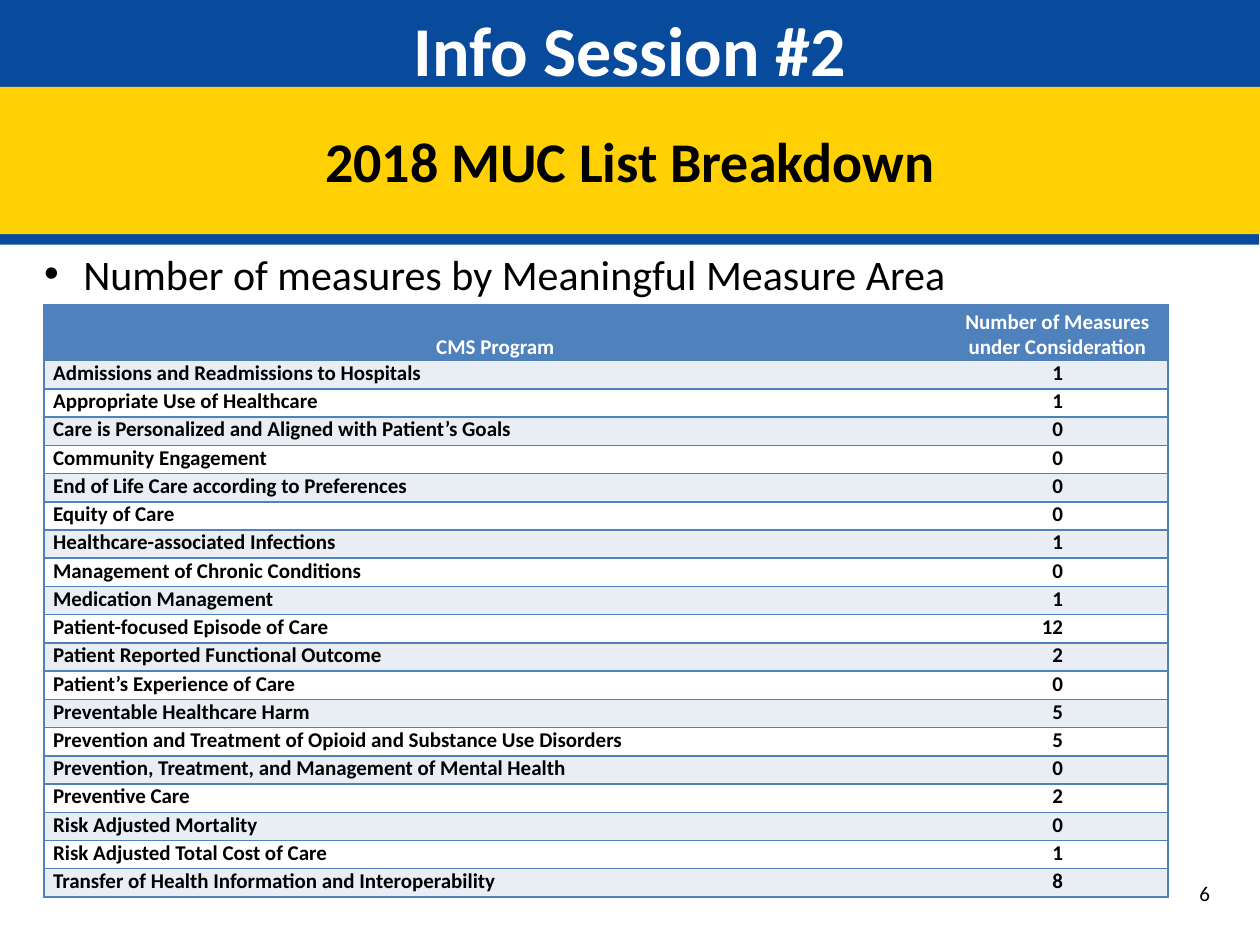
from lxml.etree import SubElement
from pptx import Presentation
from pptx.dml.color import RGBColor
from pptx.enum.shapes import MSO_SHAPE
from pptx.enum.text import MSO_ANCHOR as Anchor, PP_ALIGN as Align
from pptx.oxml.ns import qn
from pptx.util import Cm, Pt

FONT = "Calibri"
BLUE = RGBColor(0x08, 0x4A, 0x9C)
YELLOW = RGBColor(0xFF, 0xD0, 0x04)
HEADER_BLUE = RGBColor(0x4F, 0x81, 0xBD)
STRIPE = RGBColor(0xE9, 0xED, 0xF4)
WHITE = RGBColor(0xFF, 0xFF, 0xFF)
BLACK = RGBColor(0, 0, 0)

HEADINGS = ("CMS Program", "Number of Measures under Consideration")
MEASURE_AREAS = [
    ("Admissions and Readmissions to Hospitals", 1),
    ("Appropriate Use of Healthcare", 1),
    ("Care is Personalized and Aligned with Patient’s Goals", 0),
    ("Community Engagement", 0),
    ("End of Life Care according to Preferences", 0),
    ("Equity of Care", 0),
    ("Healthcare-associated Infections", 1),
    ("Management of Chronic Conditions", 0),
    ("Medication Management", 1),
    ("Patient-focused Episode of Care", 12),
    ("Patient Reported Functional Outcome", 2),
    ("Patient’s Experience of Care", 0),
    ("Preventable Healthcare Harm", 5),
    ("Prevention and Treatment of Opioid and Substance Use Disorders", 5),
    ("Prevention, Treatment, and Management of Mental Health", 0),
    ("Preventive Care", 2),
    ("Risk Adjusted Mortality", 0),
    ("Risk Adjusted Total Cost of Care", 1),
    ("Transfer of Health Information and Interoperability", 8),
]


def add_run(paragraph, text, size, color=BLACK, bold=False):
    run = paragraph.add_run()
    run.text = text
    run.font.name = FONT
    run.font.size = Pt(size)
    run.font.bold = bold
    run.font.color.rgb = color


def add_band(slide, left, top, width, height, fill, text, size, color, anchor):
    band = slide.shapes.add_shape(
        MSO_SHAPE.RECTANGLE, Cm(left), Cm(top), Cm(width), Cm(height))
    band.shadow.inherit = False
    band.fill.solid()
    band.fill.fore_color.rgb = fill
    band.line.fill.background()
    frame = band.text_frame
    frame.word_wrap = True
    frame.vertical_anchor = anchor
    frame.paragraphs[0].alignment = Align.CENTER
    add_run(frame.paragraphs[0], text, size, color, bold=True)
    return band


def add_drop_edge(band, color):
    """Give the band a hard shadow that shows as a strip along its lower edge."""
    effects = band._element.spPr.find(qn("a:effectLst"))
    shadow = SubElement(effects, qn("a:outerShdw"), blurRad="0",
                        dist=str(Pt(6)), dir=str(94 * 60000),
                        algn="ctr", rotWithShape="0")
    SubElement(shadow, qn("a:srgbClr"), val=str(color))


def add_banner(slide, left, top, width):
    add_band(slide, left, top, width, 3.73, BLUE,
             "Info Session #2", 40, WHITE, Anchor.TOP)
    subtitle = add_band(slide, left, top + 1.75, width, 2.97, YELLOW,
                        "2018 MUC List Breakdown", 32, BLACK, Anchor.MIDDLE)
    add_drop_edge(subtitle, BLUE)


def add_text(slide, left, top, width, height, text, size):
    box = slide.shapes.add_textbox(Cm(left), Cm(top), Cm(width), Cm(height))
    box.text_frame.word_wrap = True
    paragraph = box.text_frame.paragraphs[0]
    add_run(paragraph, text, size)
    return paragraph


def add_bullet(slide, left, top, width, height, text):
    paragraph = add_text(slide, left, top, width, height, text, 24)
    properties = paragraph._p.get_or_add_pPr()
    properties.set("marL", str(Cm(0.79)))
    properties.set("indent", str(-Cm(0.79)))
    SubElement(properties, qn("a:buFont"), typeface="Arial")
    SubElement(properties, qn("a:buChar"), char="•")


def style_cell(cell, fill, outer_side):
    """Fill the cell and rule every side but the one between the columns."""
    properties = cell._tc.get_or_add_tcPr()
    for side in ("lnL", "lnR", "lnT", "lnB"):
        line = SubElement(properties, qn(f"a:{side}"), w=str(Pt(1)))
        if side in (outer_side, "lnT", "lnB"):
            solid = SubElement(line, qn("a:solidFill"))
            SubElement(solid, qn("a:srgbClr"), val=str(HEADER_BLUE))
        else:
            SubElement(line, qn("a:noFill"))
    cell.fill.solid()
    cell.fill.fore_color.rgb = fill
    cell.margin_left = cell.margin_right = 0
    cell.margin_top = cell.margin_bottom = 0


def add_measure_table(slide, left, top, width, height):
    count_width, header_height = 4.47, 1.12
    row_height = (height - header_height) / len(MEASURE_AREAS)
    table = slide.shapes.add_table(
        len(MEASURE_AREAS) + 1, 2, Cm(left), Cm(top), Cm(width), Cm(height)).table
    table.columns[0].width = Cm(width - count_width)
    table.columns[1].width = Cm(count_width)

    for index, values in enumerate([HEADINGS, *MEASURE_AREAS]):
        is_header = index == 0
        table.rows[index].height = Cm(header_height if is_header else row_height)
        fill = HEADER_BLUE if is_header else STRIPE if index % 2 else WHITE
        for column, value in enumerate(values):
            cell = table.cell(index, column)
            style_cell(cell, fill, ("lnL", "lnR")[column])
            paragraph = cell.text_frame.paragraphs[0]
            if is_header:
                cell.vertical_anchor = Anchor.BOTTOM
                paragraph.alignment = Align.CENTER
            else:
                paragraph.line_spacing = Pt(14.6)
                if column == 0:
                    cell.margin_left = Cm(0.18)
                else:
                    cell.margin_right = Cm(2.12)
                    paragraph.alignment = Align.RIGHT
            add_run(paragraph, str(value), 12, WHITE if is_header else BLACK, True)


def main():
    presentation = Presentation()
    presentation.slide_width, presentation.slide_height = Cm(25.4), Cm(19.05)
    slide = presentation.slides.add_slide(presentation.slide_layouts[6])
    add_text(slide, 23.93, 17.63, 1.27, 0.76, "6", 12)
    add_banner(slide, 0, 0, 25.4)
    add_bullet(slide, 0.64, 4.88, 23.93, 1.27,
               "Number of measures by Meaningful Measure Area")
    add_measure_table(slide, 0.89, 6.15, 22.66, 11.94)
    presentation.save("out.pptx")


if __name__ == "__main__":
    main()
